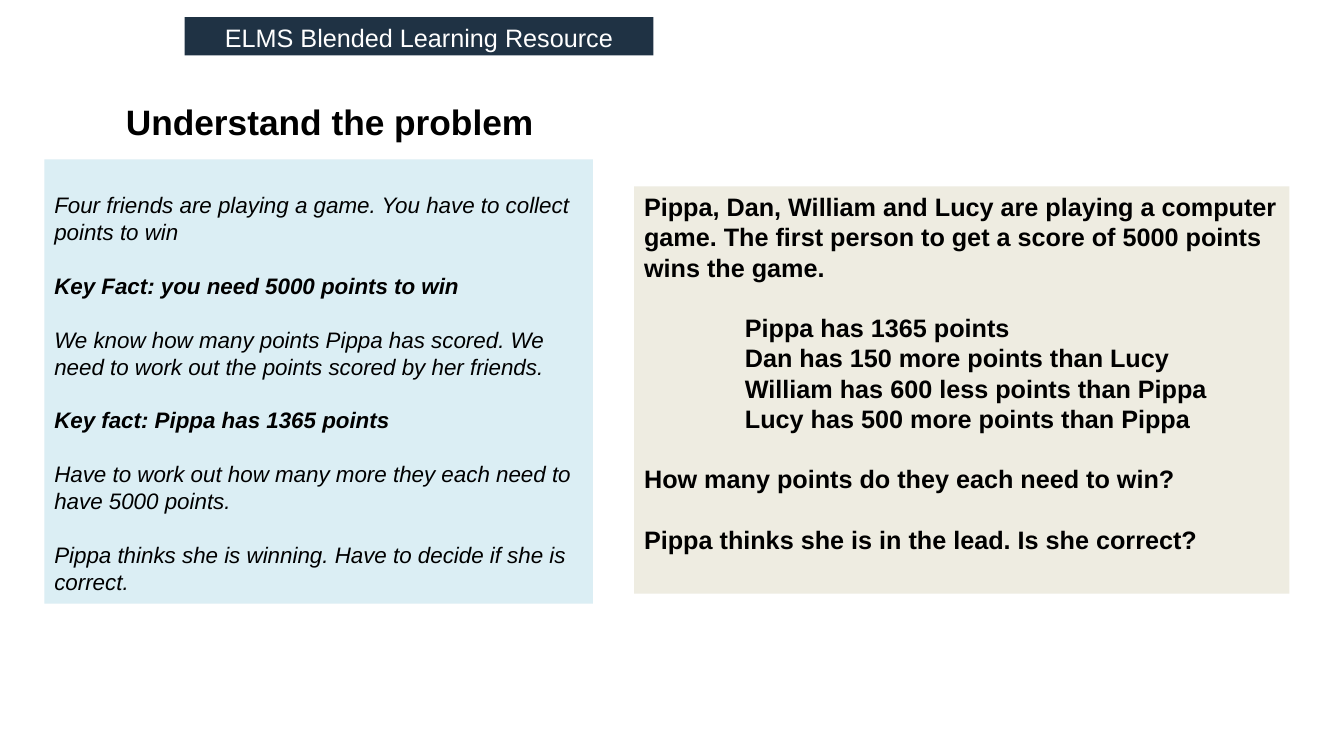
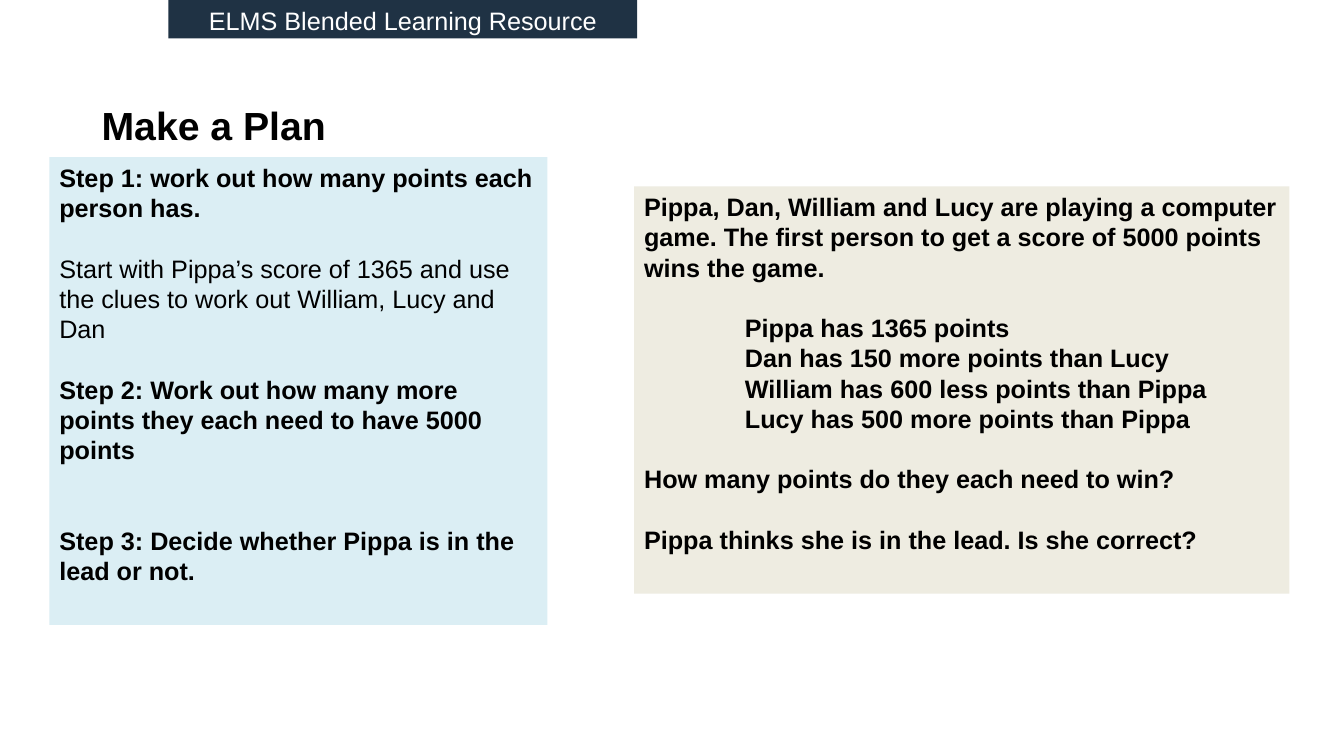
from dataclasses import dataclass

from pptx import Presentation
from pptx.dml.color import RGBColor
from pptx.enum import shapes, text
from pptx.util import Inches, Pt

FONT = "Arial"
BLACK, WHITE = "000000", "FFFFFF"
NAVY, PALE_BLUE, CREAM = "1F3244", "DBEEF4", "EEECE1"
LINE = 1.2  # line pitch as a multiple of the text size


@dataclass
class Para:
    text: str
    bold: bool = False
    italic: bool = False
    gap: int = 0  # lines left open above
    indent: float = 0


@dataclass
class Box:
    left: float
    top: float
    width: float
    height: float


@dataclass
class Page:
    title: str
    title_box: Box
    title_size: float
    banner_left: float
    banner_top: float
    working_box: Box
    working_size: float
    working_inset: float
    working: list[Para]


def rgb(colour: str) -> RGBColor:
    return RGBColor.from_string(colour)


def style(p, size: float, colour: str = BLACK, bold: bool = False, italic: bool = False) -> None:
    f = p.font
    f.name, f.size, f.bold, f.italic = FONT, Pt(size), bold, italic
    f.color.rgb = rgb(colour)


def add_title(s, title: str, box: Box, size: float) -> None:
    sp = s.shapes.add_textbox(Inches(box.left), Inches(box.top), Inches(box.width), Inches(box.height))
    tf = sp.text_frame
    tf.word_wrap = True
    tf.vertical_anchor = text.MSO_ANCHOR.MIDDLE
    p = tf.paragraphs[0]
    p.text = title
    style(p, size, bold=True)


def add_panel(s, box: Box, fill: str, paras: list[Para], size: float, colour: str = BLACK,
              align=text.PP_ALIGN.LEFT, inset: float = 0.05) -> None:
    """Filled rectangle with text running from its top edge."""
    sp = s.shapes.add_shape(shapes.MSO_SHAPE.RECTANGLE, Inches(box.left), Inches(box.top),
                            Inches(box.width), Inches(box.height))
    sp.shadow.inherit = False
    sp.fill.solid()
    sp.fill.fore_color.rgb = rgb(fill)
    sp.line.fill.background()
    tf = sp.text_frame
    tf.word_wrap = True
    tf.vertical_anchor = text.MSO_ANCHOR.TOP
    tf.margin_top = Inches(inset)
    for i, para in enumerate(paras):
        p = tf.add_paragraph() if i else tf.paragraphs[0]
        p.text = para.text
        p.alignment = align
        p.line_spacing = Pt(size * LINE)
        p.space_before = Pt(size * LINE * para.gap)
        if para.indent:
            p._p.get_or_add_pPr().set("marL", str(Inches(para.indent)))
        style(p, size, colour, para.bold, para.italic)


# Shared content
BANNER = [Para("ELMS Blended Learning Resource")]
PROBLEM_BOX = Box(6.29, 1.85, 6.5, 4.04)
CLUES = [
    "Pippa has 1365 points",
    "Dan has 150 more points than Lucy",
    "William has 600 less points than Pippa",
    "Lucy has 500 more points than Pippa",
]
PROBLEM = [
    Para("Pippa, Dan, William and Lucy are playing a computer game. "
         "The first person to get a score of 5000 points wins the game.", bold=True),
    *[Para(clue, bold=True, gap=int(i == 0), indent=1) for i, clue in enumerate(CLUES)],
    Para("How many points do they each need to win?", bold=True, gap=1),
    Para("Pippa thinks she is in the lead. Is she correct?", bold=True, gap=1),
]

# Slide content
PAGES = [
    Page("Understand the problem", Box(1.15, 0.98, 5.27, 0.45), 25.2, 1.83, 0.17,
         Box(0.44, 1.58, 5.44, 4.41), 16, 0.32, [
             Para("Four friends are playing a game. You have to collect points to win", italic=True),
             Para("Key Fact: you need 5000 points to win", True, True, 1),
             Para("We know how many points Pippa has scored. "
                  "We need to work out the points scored by her friends.", False, True, 1),
             Para("Key fact: Pippa has 1365 points", True, True, 1),
             Para("Have to work out how many more they each need to have 5000 points.", False, True, 1),
             Para("Pippa thinks she is winning. Have to decide if she is correct.", False, True, 1),
         ]),
    Page("Make a Plan", Box(0.91, 0.92, 9, 0.64), 28, 1.67, 0,
         Box(0.49, 1.56, 4.94, 4.64), 18, 0.05, [
             Para("Step 1: work out how many points each person has.", bold=True),
             Para("Start with Pippa’s score of 1365 and use the clues to work out "
                  "William, Lucy and Dan", gap=1),
             Para("Step 2: Work out how many more points they each need to have 5000 points",
                  bold=True, gap=1),
             Para("Step 3: Decide whether Pippa is in the lead or not.", bold=True, gap=2),
         ]),
]


def add_page(prs, page: Page) -> None:
    s = prs.slides.add_slide(prs.slide_layouts[6])
    add_title(s, page.title, page.title_box, page.title_size)
    add_panel(s, page.working_box, PALE_BLUE, page.working, page.working_size,
              inset=page.working_inset)
    add_panel(s, Box(page.banner_left, page.banner_top, 4.65, 0.38), NAVY, BANNER, 18,
              WHITE, text.PP_ALIGN.CENTER)
    add_panel(s, PROBLEM_BOX, CREAM, PROBLEM, 18)


def main() -> None:
    prs = Presentation()
    prs.slide_width, prs.slide_height = Inches(13.33), Inches(7.5)
    for page in PAGES:
        add_page(prs, page)
    prs.save("out.pptx")


if __name__ == "__main__":
    main()
